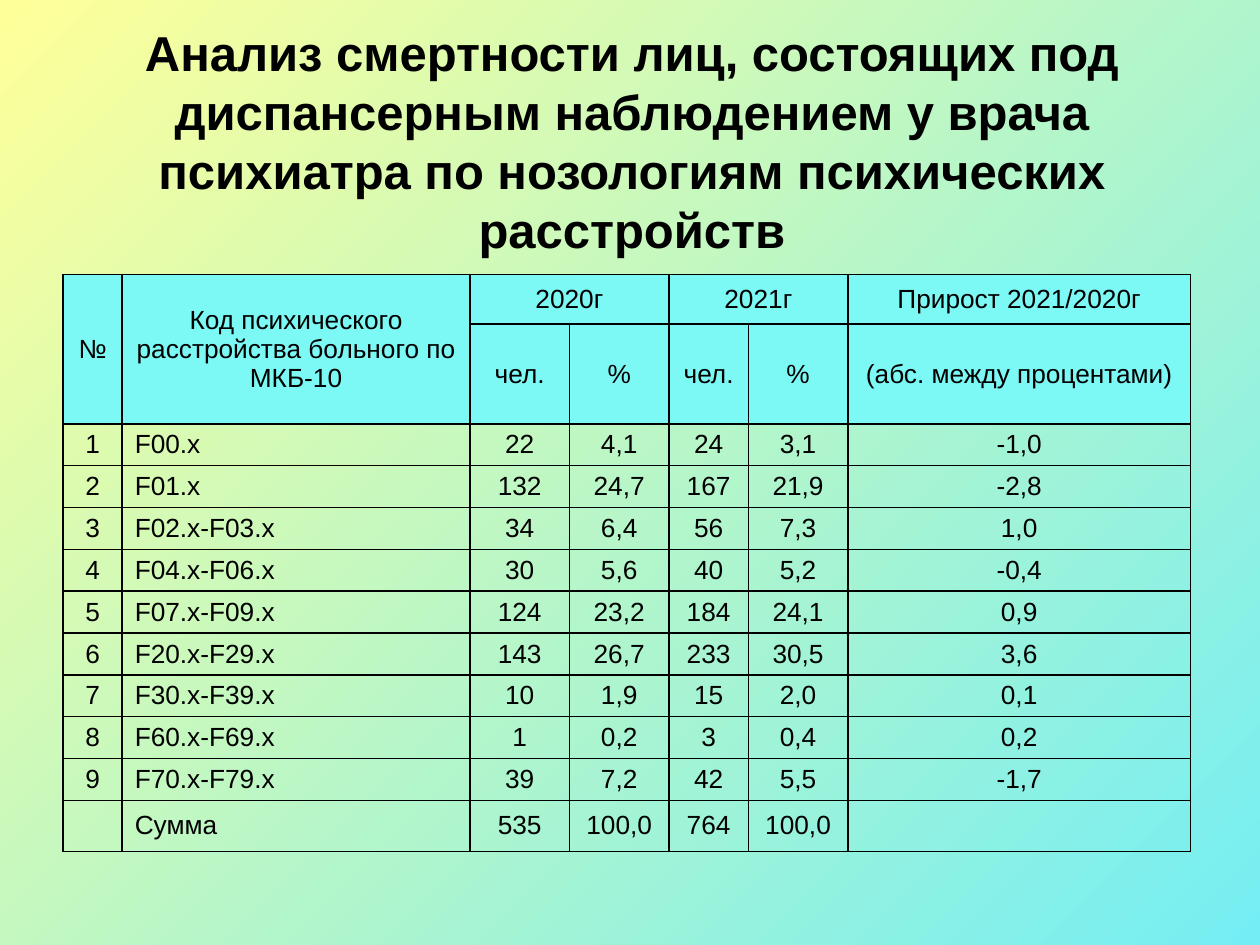
from dataclasses import dataclass
from typing import NamedTuple

from lxml.etree import SubElement
from pptx import Presentation
from pptx.dml.color import RGBColor
from pptx.enum.text import MSO_ANCHOR, MSO_AUTO_SIZE, PP_ALIGN
from pptx.oxml.ns import qn
from pptx.util import Inches, Pt


@dataclass(frozen=True)
class Theme:
    font: str = "Arial"
    ink: RGBColor = RGBColor.from_string("000000")
    header: RGBColor = RGBColor.from_string("7CF8F5")
    gradient: tuple = (RGBColor.from_string("FFFF99"), RGBColor.from_string("74EEF4"))
    title_size: int = 28
    table_size: int = 15
    border_width: int = 1


class Mortality(NamedTuple):
    number: str
    code: str
    people_2020: str
    percent_2020: str
    people_2021: str
    percent_2021: str
    growth: str


THEME = Theme()
TITLE = ("Анализ смертности лиц, состоящих под диспансерным наблюдением "
         "у врача психиатра по нозологиям психических расстройств")
HEADER = [
    ("№", "Код психического расстройства больного по МКБ-10",
     "2020г", "", "2021г", "", "Прирост 2021/2020г"),
    ("", "", "чел.", "%", "чел.", "%", "(абс. между процентами)"),
]
HEADER_MERGES = [((0, 0), (1, 0)), ((0, 1), (1, 1)), ((0, 2), (0, 3)), ((0, 4), (0, 5))]
RECORDS = [
    Mortality("1", "F00.х", "22", "4,1", "24", "3,1", "-1,0"),
    Mortality("2", "F01.х", "132", "24,7", "167", "21,9", "-2,8"),
    Mortality("3", "F02.х-F03.х", "34", "6,4", "56", "7,3", "1,0"),
    Mortality("4", "F04.х-F06.х", "30", "5,6", "40", "5,2", "-0,4"),
    Mortality("5", "F07.х-F09.х", "124", "23,2", "184", "24,1", "0,9"),
    Mortality("6", "F20.х-F29.х", "143", "26,7", "233", "30,5", "3,6"),
    Mortality("7", "F30.х-F39.х", "10", "1,9", "15", "2,0", "0,1"),
    Mortality("8", "F60.х-F69.х", "1", "0,2", "3", "0,4", "0,2"),
    Mortality("9", "F70.х-F79.х", "39", "7,2", "42", "5,5", "-1,7"),
    Mortality("", "Сумма", "535", "100,0", "764", "100,0", ""),
]
COLUMN_WIDTHS = [0.47, 2.76, 0.79, 0.79, 0.63, 0.79, 2.72]
ROW_HEIGHTS = [0.39, 0.38] + [0.32] * (len(RECORDS) - 1) + [0.4]
CODE_COLUMN = Mortality._fields.index("code")


def write_text(frame, text: str, size: int, bold: bool, align: PP_ALIGN) -> None:
    para = frame.paragraphs[0]
    para.alignment = align
    span = para.add_run()
    span.text = text
    span.font.name = THEME.font
    span.font.size = Pt(size)
    span.font.bold = bold
    span.font.color.rgb = THEME.ink


def add_borders(cell) -> None:
    properties = cell._tc.get_or_add_tcPr()
    for side in ("a:lnL", "a:lnR", "a:lnT", "a:lnB"):
        line = SubElement(properties, qn(side), w=str(Pt(THEME.border_width)))
        fill = SubElement(line, qn("a:solidFill"))
        SubElement(fill, qn("a:srgbClr"), val=str(THEME.ink))


def paint_background(page) -> None:
    fill = page.background.fill
    fill.gradient()
    fill.gradient_angle = 315
    for stop, color in zip(fill.gradient_stops, THEME.gradient):
        stop.color.rgb = color


def add_title(page) -> None:
    box = page.shapes.title
    box.left, box.top = Inches(0.52), Inches(0.21)
    box.width, box.height = Inches(8.99), Inches(1.81)
    frame = box.text_frame
    frame.auto_size = MSO_AUTO_SIZE.NONE
    frame.vertical_anchor = MSO_ANCHOR.MIDDLE
    write_text(frame, TITLE, THEME.title_size, True, PP_ALIGN.CENTER)


def fill_cell(cell, text: str, is_header: bool, is_code: bool, is_total: bool) -> None:
    add_borders(cell)
    if is_header:
        cell.fill.solid()
        cell.fill.fore_color.rgb = THEME.header
    else:
        cell.fill.background()
    cell.vertical_anchor = MSO_ANCHOR.BOTTOM if is_code and not is_total else MSO_ANCHOR.MIDDLE
    if text:
        align = PP_ALIGN.JUSTIFY if is_code else PP_ALIGN.CENTER
        write_text(cell.text_frame, text, THEME.table_size, False, align)


def add_mortality_table(page) -> None:
    rows = HEADER + RECORDS
    table = page.shapes.add_table(
        len(rows), len(COLUMN_WIDTHS), Inches(0.5), Inches(2.18),
        Inches(sum(COLUMN_WIDTHS)), Inches(sum(ROW_HEIGHTS))).table
    table.first_row = table.horz_banding = False
    for column, width in zip(table.columns, COLUMN_WIDTHS):
        column.width = Inches(width)
    for row, height in zip(table.rows, ROW_HEIGHTS):
        row.height = Inches(height)
    for start, end in HEADER_MERGES:
        table.cell(*start).merge(table.cell(*end))
    for r, values in enumerate(rows):
        is_header = r < len(HEADER)
        for c, text in enumerate(values):
            is_code = c == CODE_COLUMN and not is_header
            fill_cell(table.cell(r, c), text, is_header, is_code, r == len(rows) - 1)


def main() -> None:
    deck = Presentation()
    deck.slide_width, deck.slide_height = Inches(10), Inches(7.5)
    page = deck.slides.add_slide(deck.slide_layouts.get_by_name("Title Only"))
    paint_background(page)
    add_title(page)
    add_mortality_table(page)
    deck.save("out.pptx")


if __name__ == "__main__":
    main()
